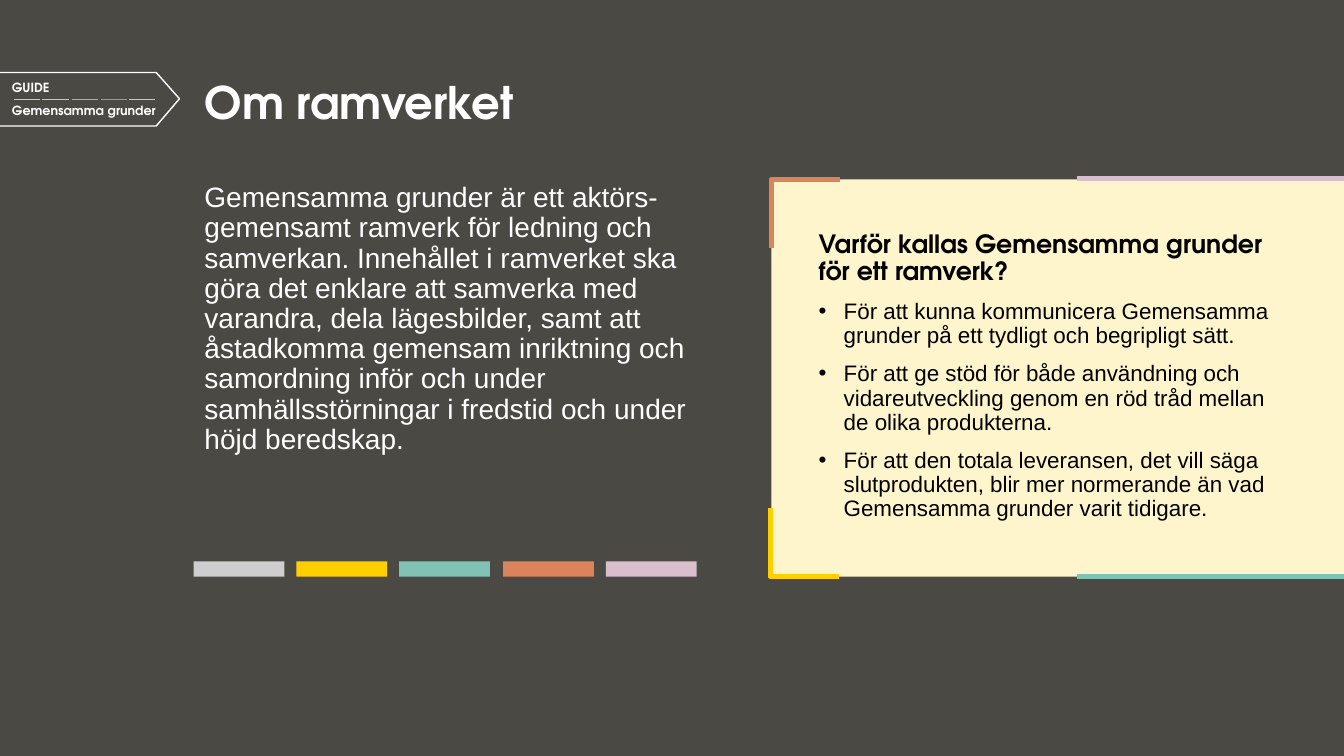
from dataclasses import dataclass

from lxml import etree
from pptx import Presentation
from pptx.dml.color import RGBColor
from pptx.enum.shapes import MSO_CONNECTOR, MSO_SHAPE
from pptx.enum.text import MSO_ANCHOR
from pptx.oxml.ns import qn
from pptx.shapes.autoshape import Shape
from pptx.slide import Slide
from pptx.text.text import _Paragraph
from pptx.util import Emu, Pt

RECTANGLE = MSO_SHAPE.RECTANGLE
STRAIGHT = MSO_CONNECTOR.STRAIGHT
TOP, BOTTOM = MSO_ANCHOR.TOP, MSO_ANCHOR.BOTTOM

EMU_PER_PX = 9144  # 100 px to the inch
SLIDE_WIDTH, SLIDE_HEIGHT = 1333, 750
BULLET_INDENT = 25

CHARCOAL = RGBColor(0x4A, 0x49, 0x44)
WHITE = RGBColor(0xFF, 0xFF, 0xFF)
BLACK = RGBColor(0x00, 0x00, 0x00)
CREAM = RGBColor(0xFF, 0xF5, 0xCC)
GREY = RGBColor(0xCE, 0xCE, 0xCE)
YELLOW = RGBColor(0xFF, 0xCF, 0x00)
TEAL = RGBColor(0x80, 0xC2, 0xB4)
ORANGE = RGBColor(0xDB, 0x83, 0x5A)
PINK = RGBColor(0xD9, 0xBE, 0xCD)
PALETTE = [GREY, YELLOW, TEAL, ORANGE, PINK]

HEADING_FONT = "TeX Gyre Adventor"
BODY_FONT = "Arial"


@dataclass(frozen=True)
class Box:
    left: int
    top: int
    width: int
    height: int


@dataclass(frozen=True)
class TextStyle:
    font: str
    size: int
    color: RGBColor
    bold: bool = False
    line_spacing: float = 0.9
    space_before: int = 0
    space_after: int = 0
    bullet: bool = False


@dataclass(frozen=True)
class TextBlock:
    box: Box
    paragraphs: list[tuple[str, TextStyle]]
    anchor: MSO_ANCHOR = TOP


@dataclass(frozen=True)
class Outline:
    points: list[tuple[int, int]]
    line_color: RGBColor
    line_width: int
    fill: RGBColor | None = None


@dataclass(frozen=True)
class Rule:
    left: int
    right: int
    y: int
    color: RGBColor
    width: int


LABEL = TextStyle(HEADING_FONT, 9, WHITE, bold=True, line_spacing=1.0)
TITLE = TextStyle(HEADING_FONT, 32, WHITE, bold=True)
INTRO = TextStyle(BODY_FONT, 20, WHITE, space_after=12)
PANEL_HEADING = TextStyle(HEADING_FONT, 18, BLACK, bold=True)
PANEL_BULLET = TextStyle(BODY_FONT, 16, BLACK, space_before=10, bullet=True)

GUIDE_BANNER = Outline(
    [(-3, 72), (155, 72), (178, 98), (155, 125), (-3, 125)], WHITE, 1, CHARCOAL
)
PANEL = Box(765, 178, 568, 394)
PANEL_CORNERS = [
    Outline([(765, 246), (765, 178), (833, 178)], ORANGE, 4),
    Outline([(832, 572), (764, 572), (764, 504)], YELLOW, 4),
]
PANEL_EDGES = [
    Rule(1068, SLIDE_WIDTH, 572, TEAL, 4),
    Rule(1068, SLIDE_WIDTH, 177, PINK, 4),
]

TEXT_BLOCKS = [
    TextBlock(Box(2, 74, 70, 25), [("GUIDE", LABEL)]),
    TextBlock(Box(2, 97, 168, 25), [("Gemensamma grunder", LABEL)], BOTTOM),
    TextBlock(Box(193, 75, 1034, 59), [("Om ramverket", TITLE)]),
    TextBlock(
        Box(193, 177, 530, 334),
        [(
            "Gemensamma grunder är ett aktörs-gemensamt ramverk för ledning och "
            "samverkan. Innehållet i ramverket ska göra det enklare att samverka "
            "med varandra, dela lägesbilder, samt att åstadkomma gemensam "
            "inriktning och samordning inför och under samhällsstörningar i "
            "fredstid och under höjd beredskap.",
            INTRO,
        )],
    ),
    TextBlock(
        Box(802, 225, 480, 301),
        [
            ("Varför kallas Gemensamma grunder för ett ramverk?", PANEL_HEADING),
            ("För att kunna kommunicera Gemensamma grunder på ett tydligt och "
             "begripligt sätt.", PANEL_BULLET),
            ("För att ge stöd för både användning och vidareutveckling genom en "
             "röd tråd mellan de olika produkterna.", PANEL_BULLET),
            ("För att den totala leveransen, det vill säga slutprodukten, blir mer "
             "normerande än vad Gemensamma grunder varit tidigare.", PANEL_BULLET),
        ],
    ),
]


def px(length: int) -> Emu:
    return Emu(length * EMU_PER_PX)


def palette_positions(first: int, last: int) -> list[tuple[int, RGBColor]]:
    """Spread one left edge per palette colour evenly from first to last."""
    step = (last - first) / (len(PALETTE) - 1)
    return [(first + round(i * step), color) for i, color in enumerate(PALETTE)]


def add_rectangle(slide: Slide, box: Box, color: RGBColor) -> Shape:
    shape = slide.shapes.add_shape(
        RECTANGLE, px(box.left), px(box.top), px(box.width), px(box.height)
    )
    shape.shadow.inherit = False
    shape.fill.solid()
    shape.fill.fore_color.rgb = color
    shape.line.fill.background()
    return shape


def add_outline(slide: Slide, outline: Outline) -> None:
    """Draw a closed shape when the outline has a fill, else an open line."""
    closed = outline.fill is not None
    builder = slide.shapes.build_freeform(*outline.points[0], scale=EMU_PER_PX)
    builder.add_line_segments(outline.points[1:], close=closed)
    shape = builder.convert_to_shape()
    shape.shadow.inherit = False
    if closed:
        shape.fill.solid()
        shape.fill.fore_color.rgb = outline.fill
    else:
        shape.fill.background()
    shape.line.color.rgb = outline.line_color
    shape.line.width = Pt(outline.line_width)


def add_rule(slide: Slide, rule: Rule) -> None:
    connector = slide.shapes.add_connector(
        STRAIGHT, px(rule.left), px(rule.y), px(rule.right), px(rule.y)
    )
    connector.line.color.rgb = rule.color
    connector.line.width = Pt(rule.width)
    etree.SubElement(connector._element.spPr, qn("a:effectLst"))


def add_bullet(paragraph: _Paragraph) -> None:
    properties = paragraph._p.get_or_add_pPr()
    properties.set("marL", str(px(BULLET_INDENT)))
    properties.set("indent", str(-px(BULLET_INDENT)))
    etree.SubElement(properties, qn("a:buFont"), typeface=BODY_FONT)
    etree.SubElement(properties, qn("a:buChar"), char="•")


def format_paragraph(paragraph: _Paragraph, style: TextStyle) -> None:
    paragraph.line_spacing = style.line_spacing
    paragraph.space_before = Pt(style.space_before)
    paragraph.space_after = Pt(style.space_after)
    if style.bullet:
        add_bullet(paragraph)
    for run in paragraph.runs:
        run.font.name = style.font
        run.font.size = Pt(style.size)
        run.font.bold = style.bold
        run.font.color.rgb = style.color


def add_text(slide: Slide, block: TextBlock) -> None:
    box = block.box
    text_frame = slide.shapes.add_textbox(
        px(box.left), px(box.top), px(box.width), px(box.height)
    ).text_frame
    text_frame.word_wrap = True
    text_frame.vertical_anchor = block.anchor
    text_frame.text = "\n".join(text for text, _ in block.paragraphs)
    for paragraph, (_, style) in zip(text_frame.paragraphs, block.paragraphs):
        format_paragraph(paragraph, style)


def main() -> None:
    presentation = Presentation()
    presentation.slide_width = px(SLIDE_WIDTH)
    presentation.slide_height = px(SLIDE_HEIGHT)
    slide = presentation.slides.add_slide(presentation.slide_layouts[6])
    slide.background.fill.solid()
    slide.background.fill.fore_color.rgb = CHARCOAL

    add_outline(slide, GUIDE_BANNER)
    for left, color in palette_positions(14, 128):
        add_rule(slide, Rule(left, left + 26, 99, color, 1))
    for left, color in palette_positions(192, 601):
        add_rectangle(slide, Box(left, 557, 90, 15), color)
    add_rectangle(slide, PANEL, CREAM)
    for corner in PANEL_CORNERS:
        add_outline(slide, corner)
    for edge in PANEL_EDGES:
        add_rule(slide, edge)
    for block in TEXT_BLOCKS:
        add_text(slide, block)
    presentation.save("out.pptx")


if __name__ == "__main__":
    main()
